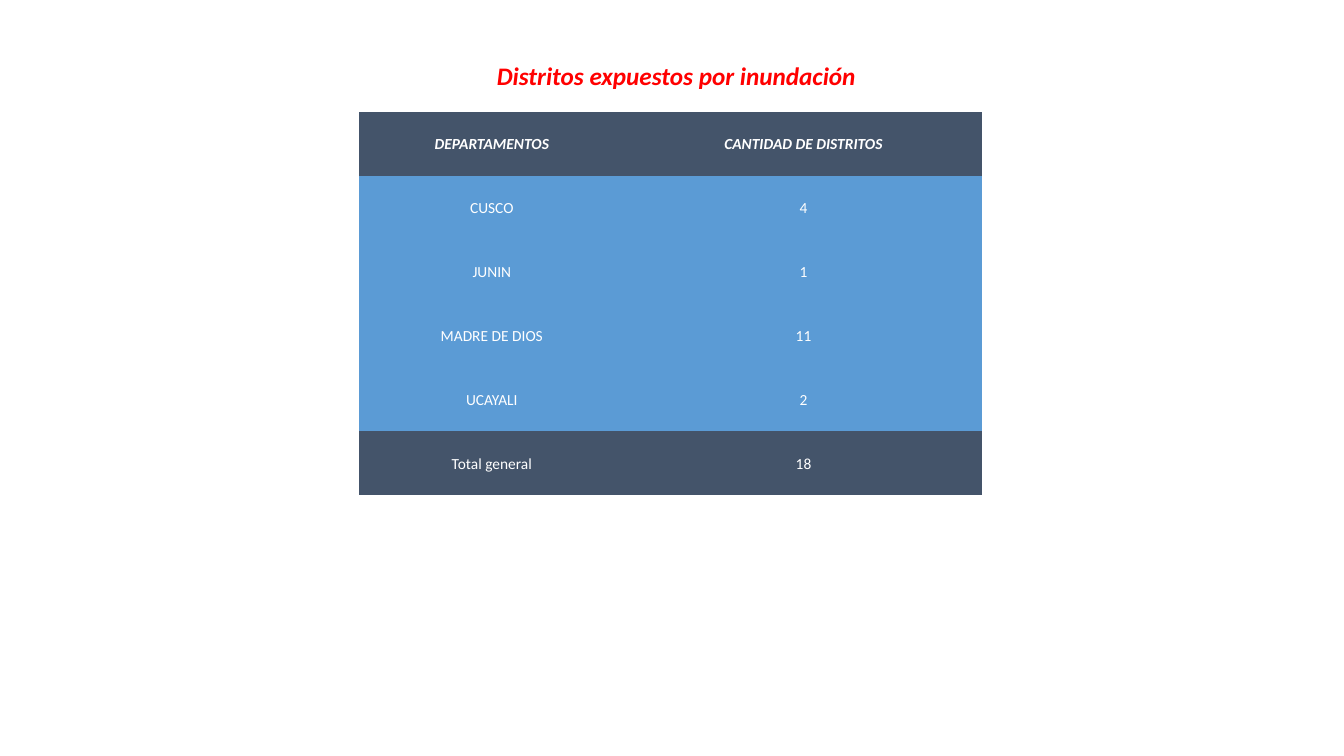
from dataclasses import dataclass

from pptx import Presentation
from pptx import util as u
from pptx.dml.color import RGBColor
from pptx.enum import text
from pptx.oxml import ns


@dataclass(frozen=True)
class Theme:
    font: str = "Calibri"
    title_color: str = "FF0000"
    cell_color: str = "FFFFFF"
    band_fill: str = "44546A"
    body_fill: str = "5B9BD5"
    title_size: int = 18
    cell_size: int = 11
    plain_table: str = "{2D5ABB26-0587-4C30-8999-92F81FD0307C}"


def apply(target, values):
    for name, value in values.items():
        setattr(target, name, value)


class SlideBuilder:
    def __init__(self, slide, theme):
        self.slide = slide
        self.theme = theme

    def label(self, frame, wording, size, color, strong):
        paragraph = frame.paragraphs[0]
        paragraph.alignment = text.PP_ALIGN.CENTER
        run = paragraph.add_run()
        run.text = wording
        apply(run.font, {"name": self.theme.font, "size": u.Pt(size),
                         "bold": strong, "italic": strong})
        run.font.color.rgb = RGBColor.from_string(color)

    def title(self, wording, left, top, width, height):
        heading = self.slide.shapes.add_textbox(
            u.Cm(left), u.Cm(top), u.Cm(width), u.Cm(height))
        apply(heading.text_frame, {
            "word_wrap": False,
            "auto_size": text.MSO_AUTO_SIZE.SHAPE_TO_FIT_TEXT})
        self.label(heading.text_frame, wording, self.theme.title_size,
                   self.theme.title_color, True)

    def table(self, rows, left, top, widths, row_height):
        frame = self.slide.shapes.add_table(
            len(rows), len(widths), u.Cm(left), u.Cm(top),
            u.Cm(sum(widths)), u.Cm(row_height * len(rows)))
        for style in frame._element.iter(ns.qn("a:tableStyleId")):
            style.text = self.theme.plain_table
        districts = frame.table
        for column, width in zip(districts.columns, widths):
            column.width = u.Cm(width)
        last = len(rows) - 1
        for r, values in enumerate(rows):
            districts.rows[r].height = u.Cm(row_height)
            fill = self.theme.band_fill if r in (0, last) else self.theme.body_fill
            for c, value in enumerate(values):
                self.cell(districts.cell(r, c), value, fill, r == 0)

    def cell(self, cell, value, fill, strong):
        apply(cell, {"margin_left": u.Cm(0.02), "margin_right": u.Cm(0.02),
                     "margin_top": u.Cm(0.02), "margin_bottom": 0,
                     "vertical_anchor": text.MSO_ANCHOR.MIDDLE})
        cell.fill.solid()
        cell.fill.fore_color.rgb = RGBColor.from_string(fill)
        self.label(cell.text_frame, value, self.theme.cell_size,
                   self.theme.cell_color, strong)


def main():
    deck = Presentation()
    apply(deck, {"slide_width": u.Cm(33.87), "slide_height": u.Cm(19.05)})
    builder = SlideBuilder(deck.slides.add_slide(deck.slide_layouts[6]), Theme())
    builder.title("Distritos expuestos por inundación", 12.22, 1.4, 9.65, 1.02)
    builder.table(
        [("DEPARTAMENTOS", "CANTIDAD DE DISTRITOS"),
         ("CUSCO", "4"),
         ("JUNIN", "1"),
         ("MADRE DE DIOS", "11"),
         ("UCAYALI", "2"),
         ("Total general", "18")],
        left=9.04, top=2.82, widths=(6.71, 9), row_height=1.61)
    deck.save("out.pptx")


if __name__ == "__main__":
    main()
